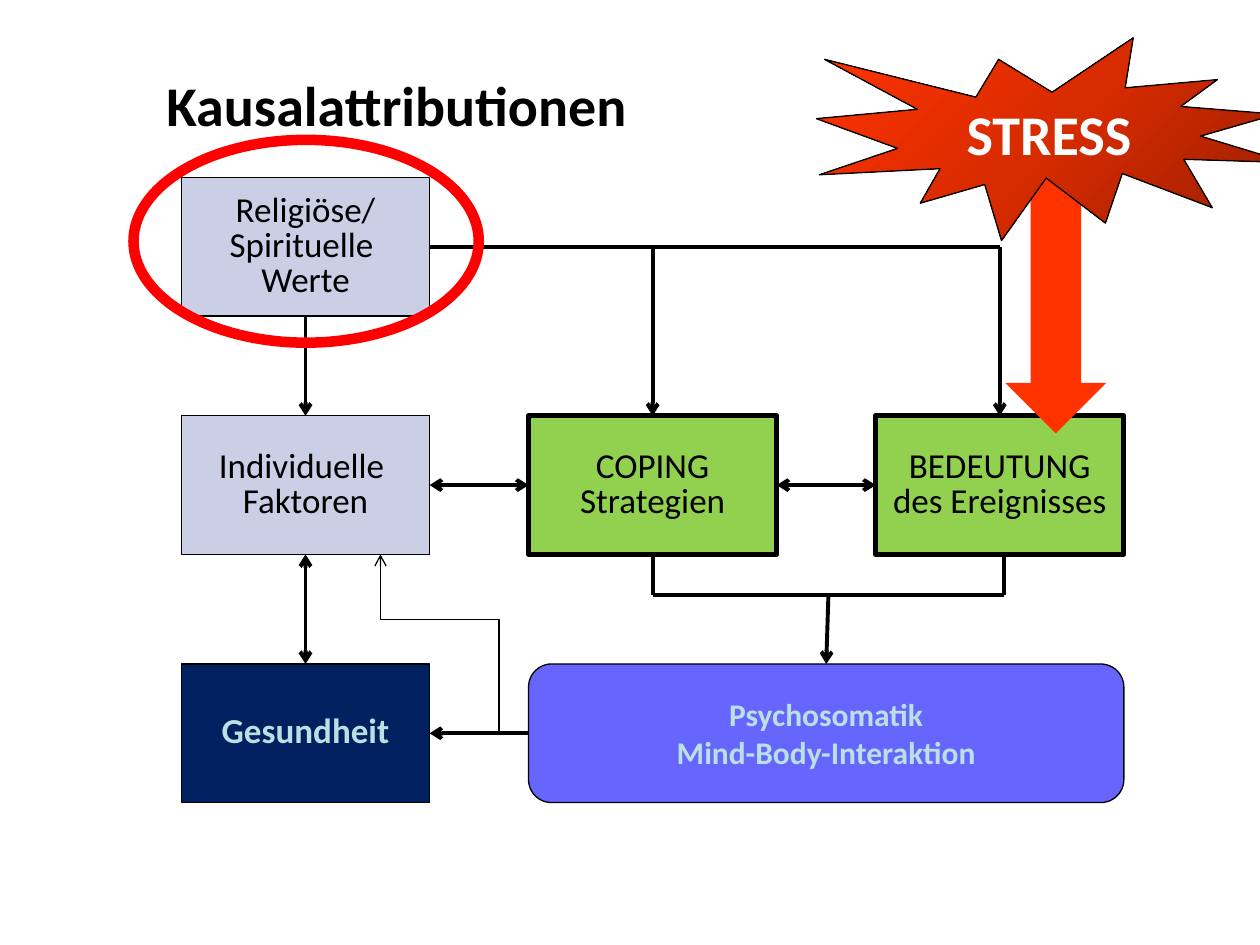
"""Builds a slide on causal attributions, stress and coping."""
from copy import deepcopy

from lxml import etree
from pptx import Presentation
from pptx import util as u
from pptx.dml.color import RGBColor
from pptx.enum import shapes, text
from pptx.oxml.ns import qn

HUES = {
    "black": "000000", "white": "FFFFFF", "gray": "CBCFE5", "navy": "002060",
    "green": "92D050", "violet": "6666FF", "pale": "BBE0E3", "red": "FF0000",
    "flame": "FF3300", "ember": "D72B00", "rust": "971E00",
}
COLS = [1.44 + 2.755 * n for n in range(3)]
ROWS = [1.41, 3.3, 5.27]
WIDE, HIGH = 1.97, 1.1
TOP, LEFT, BOTTOM, RIGHT = range(4)
KIND = shapes.MSO_SHAPE


def hue(name):
    return RGBColor.from_string(HUES[name])


def mid(col):
    return COLS[col] + WIDE / 2


def write(frame, lines, size, color, bold=False, lead=None, align=text.PP_ALIGN.CENTER):
    """Fill a text frame with one paragraph per line."""
    frame.vertical_anchor = text.MSO_ANCHOR.MIDDLE
    for n, line in enumerate(lines):
        para = frame.add_paragraph() if n else frame.paragraphs[0]
        para.alignment = align
        if lead:
            para.line_spacing = u.Pt(lead)
        run = para.add_run()
        run.text = line
        font = run.font
        font.name, font.size, font.bold = "Calibri", u.Pt(size), bold
        font.color.rgb = hue(color)


def draw(slide, kind, place, fill=None, line="black", width=0.75):
    """Add a preset shape with a plain fill and outline."""
    shape = slide.shapes.add_shape(kind, *map(u.Inches, place))
    shape.shadow.inherit = False
    if fill:
        shape.fill.solid()
        shape.fill.fore_color.rgb = hue(fill)
    else:
        shape.fill.background()
    if line:
        shape.line.color.rgb = hue(line)
        shape.line.width = u.Pt(width)
    else:
        shape.line.fill.background()
    shape.text_frame.word_wrap = False
    return shape


def box(slide, col, row, lines, fill, color="black", width=0.75, bold=False):
    """Add a labelled rectangle in a cell of the grid."""
    shape = draw(slide, KIND.RECTANGLE, (COLS[col], ROWS[row], WIDE, HIGH), fill, width=width)
    write(shape.text_frame, lines, 20, color, bold, lead=20)
    return shape


def link(slide, start, end, tips="", width=2.25, kind=shapes.MSO_CONNECTOR.STRAIGHT):
    """Join two ends, each a point or a pair of shape and side."""
    wire = slide.shapes.add_connector(kind, 0, 0, 0, 0)
    points = [None if hasattr(e[0], "shape_id") else [u.Inches(v) for v in e]
              for e in (start, end)]
    if points[0]:
        wire.begin_x, wire.begin_y = points[0]
    else:
        wire.begin_connect(*start)
    if points[1]:
        wire.end_x, wire.end_y = points[1]
    else:
        wire.end_connect(*end)
    wire.line.color.rgb = hue("black")
    wire.line.width = u.Pt(width)
    line = wire.line._get_or_add_ln()
    for tip in tips.split():
        etree.SubElement(line, qn(f"a:{tip}End"), type="arrow")
    etree.SubElement(wire._element.spPr, qn("a:effectLst"))
    return wire


def bend(slide):
    """Add the thin elbow from the interaction up to the personal factors."""
    wire = link(slide, (2.78, 4.64), (4.2, 5.58), "tail", 0.75, shapes.MSO_CONNECTOR.ELBOW)
    props = wire._element.spPr
    frame = props.find(qn("a:xfrm"))
    frame.set("rot", "16200000")
    frame.set("flipV", "1")
    geom = props.find(qn("a:prstGeom"))
    guides = geom.find(qn("a:avLst"))
    if guides is None:
        guides = etree.SubElement(geom, qn("a:avLst"))
    etree.SubElement(guides, qn("a:gd"), name="adj1", fmla="val 63700")


def burst(slide):
    """Add the stress burst with its three-stop gradient."""
    shape = draw(slide, KIND.EXPLOSION1, (6.48, 0.3, 3.74, 1.61), "flame")
    shape.fill.gradient()
    shape.fill.gradient_angle = 135
    stops = shape._element.spPr.find(qn("a:gradFill")).find(qn("a:gsLst"))
    stops.insert(1, deepcopy(stops[0]))
    for n, (stop, name) in enumerate(zip(shape.fill.gradient_stops, ("rust", "ember", "flame"))):
        stop.position = n / 2
        stop.color.rgb = hue(name)
    write(shape.text_frame, ["STRESS"], 32, "white", True)


def head(slide):
    """Place and fill the title."""
    title = slide.shapes.title
    title.left, title.top, title.width, title.height = map(u.Inches, (1.22, 0.28, 8.43, 1.1))
    title.text_frame.auto_size = text.MSO_AUTO_SIZE.NONE
    write(title.text_frame, ["Kausalattributionen"], 32, "black", True, align=text.PP_ALIGN.LEFT)


def main():
    deck = Presentation()
    deck.slide_width, deck.slide_height = u.Inches(10), u.Inches(7.5)
    slide = deck.slides.add_slide(deck.slide_layouts[5])
    head(slide)

    self_ = box(slide, 0, 1, ["Individuelle ", "Faktoren"], "gray")
    health = box(slide, 0, 2, ["Gesundheit"], "navy", "pale", bold=True)
    coping = box(slide, 1, 1, ["COPING", "Strategien"], "green", width=3)
    sense = box(slide, 2, 1, ["BEDEUTUNG", "des Ereignisses"], "green", width=3)
    psyche = draw(slide, KIND.ROUNDED_RECTANGLE,
                  (COLS[1], ROWS[2], COLS[2] + WIDE - COLS[1], HIGH), "violet")
    write(psyche.text_frame, ["Psychosomatik", "Mind-Body-Interaktion"], 18, "pale", True)

    link(slide, (self_, RIGHT), (coping, LEFT), "head tail")
    link(slide, (coping, RIGHT), (sense, LEFT), "head tail")
    link(slide, (self_, BOTTOM), (health, TOP), "head tail")
    link(slide, (psyche, LEFT), (health, RIGHT), "tail")

    low, east = 4.72, 7.97
    link(slide, (coping, BOTTOM), (mid(1), low))
    link(slide, (east, ROWS[1] + HIGH), (east, low))
    link(slide, (mid(1), low), (east, low))
    link(slide, ((mid(1) + east) / 2, low), (psyche, TOP), "tail")
    bend(slide)

    draw(slide, KIND.DOWN_ARROW, (7.98, ROWS[0], 0.8, 2.03), "flame", None)
    burst(slide)

    faith = box(slide, 0, 0, ["Religiöse/", "Spirituelle ", "Werte"], "gray")
    high = ROWS[0] + HIGH / 2
    link(slide, (faith, RIGHT), (mid(2), high))
    link(slide, (mid(2), high), (sense, TOP), "tail")
    link(slide, (mid(1), high), (coping, TOP), "tail")
    link(slide, (faith, BOTTOM), (self_, TOP), "tail")
    draw(slide, KIND.OVAL, (1.06, 1.11, 2.74, 1.61), None, "red", 6)

    deck.save("out.pptx")


if __name__ == "__main__":
    main()
